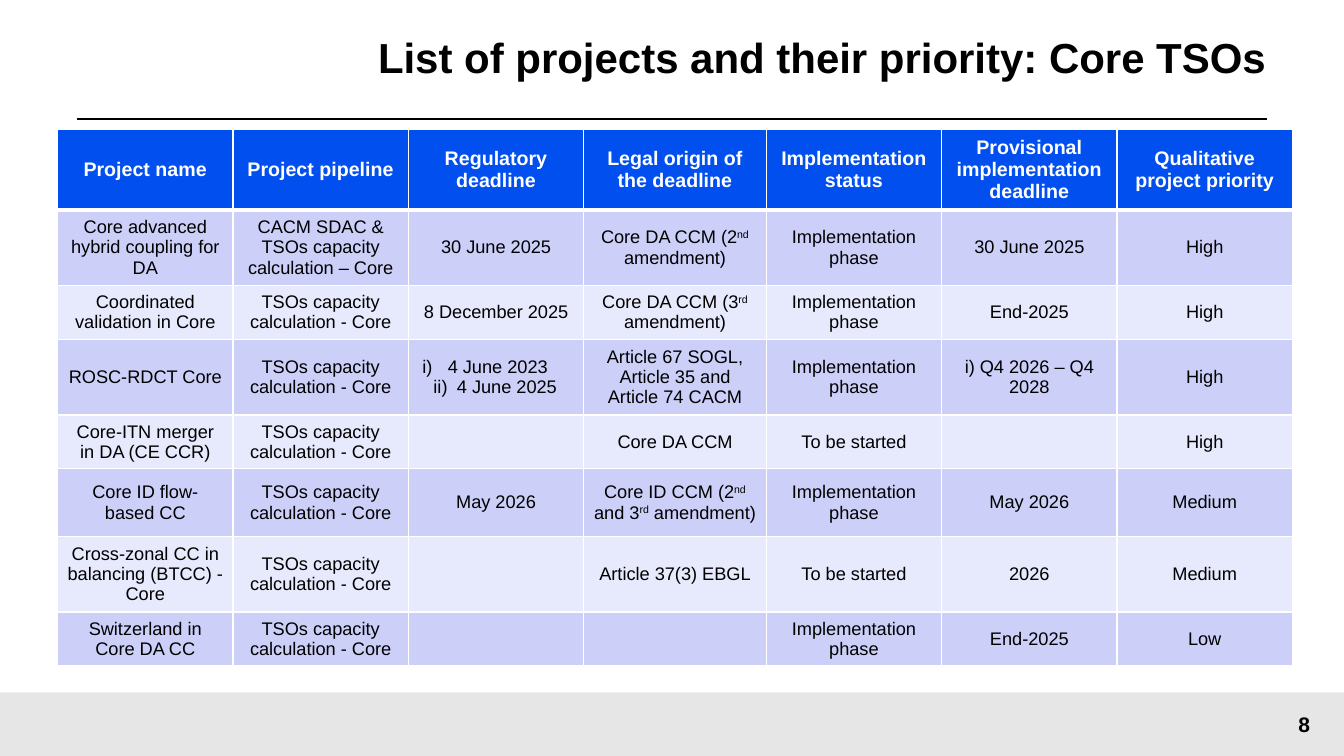
from dataclasses import dataclass

from lxml import etree
from pptx import Presentation
from pptx import util as u
from pptx.dml.color import RGBColor
from pptx.enum import shapes, text
from pptx.oxml import ns


@dataclass(frozen=True)
class Theme:
    font: str = "Arial"
    black: str = "000000"
    white: str = "FFFFFF"
    header: str = "004FEE"
    bands: tuple = ("CCD0F8", "E7E9FC")
    footer: str = "E6E6E6"
    title_size: int = 30
    page_size: int = 15
    header_size: int = 14
    body_size: int = 13


THEME = Theme()
CENTER = text.PP_ALIGN.CENTER
LEFT = text.PP_ALIGN.LEFT
RIGHT = text.PP_ALIGN.RIGHT

SLIDE_WIDTH, SLIDE_HEIGHT = 33.87, 19.05
COLUMN_WIDTHS = [4.42, 4.42, 4.42, 4.6, 4.42, 4.42, 4.42]
ROW_HEIGHTS = [1.83, 1.7, 1.24, 1.7, 1.22, 1.7, 1.7, 1.22]
# Left margin and hanging indent of the items in a numbered cell
ITEM_INDENTS = [(0.74, 0.64), (0.97, 0.59)]

HEADINGS = ["Project name", "Project pipeline", "Regulatory deadline",
            "Legal origin of the deadline", "Implementation status",
            "Provisional implementation deadline", "Qualitative project priority"]
PIPELINE = "TSOs capacity calculation - Core"
ACTIVE = "Implementation phase"
WAITING = "To be started"
# Carets enclose superscripts
PROJECTS = [
    ["Core advanced hybrid coupling for DA", "CACM SDAC & TSOs capacity calculation – Core",
     "30 June 2025", "Core DA CCM (2^nd^ amendment)", ACTIVE, "30 June 2025", "High"],
    ["Coordinated validation in Core", PIPELINE, "8 December 2025",
     "Core DA CCM (3^rd^ amendment)", ACTIVE, "End-2025", "High"],
    ["ROSC-RDCT Core", PIPELINE, "i)\t4 June 2023\nii)\t4 June 2025",
     "Article 67 SOGL, Article 35 and Article 74 CACM", ACTIVE, "i) Q4 2026 – Q4 2028", "High"],
    ["Core-ITN merger in DA (CE CCR)", PIPELINE, "", "Core DA CCM", WAITING, "", "High"],
    ["Core ID flow-based CC", PIPELINE, "May 2026",
     "Core ID CCM (2^nd^ and 3^rd^ amendment)", ACTIVE, "May 2026", "Medium"],
    ["Cross-zonal CC in balancing (BTCC) - Core", PIPELINE, "", "Article 37(3) EBGL",
     WAITING, "2026", "Medium"],
    ["Switzerland in Core DA CC", PIPELINE, "", "", ACTIVE, "End-2025", "Low"],
]


def write(frame, wording, size, color=THEME.black, bold=False, align=CENTER, spacing=None):
    """Fill a text frame, one paragraph per line of wording."""
    frame.word_wrap = True
    lines = wording.split("\n")
    for index, line in enumerate(lines):
        paragraph = frame.paragraphs[0] if index == 0 else frame.add_paragraph()
        paragraph.alignment = align
        paragraph.line_spacing = spacing
        if len(lines) > 1:
            margin, hanging = ITEM_INDENTS[index]
            properties = paragraph._p.get_or_add_pPr()
            properties.set("marL", str(u.Cm(margin)))
            properties.set("indent", str(-u.Cm(hanging)))
        paragraph.font.size = u.Pt(size)
        for position, part in enumerate(line.split("^")):
            if not part:
                continue
            run = paragraph.add_run()
            run.text = part
            run.font.name = THEME.font
            run.font.size = u.Pt(size)
            run.font.bold = bold
            run.font.color.rgb = RGBColor.from_string(color)
            if position % 2:
                run._r.get_or_add_rPr().set("baseline", "30000")


def add_text(slide, wording, left, top, width, height, inset_x=0, inset_y=0, **style):
    box = slide.shapes.add_textbox(u.Cm(left), u.Cm(top), u.Cm(width), u.Cm(height))
    frame = box.text_frame
    frame.margin_left = frame.margin_right = u.Cm(inset_x)
    frame.margin_top = frame.margin_bottom = u.Cm(inset_y)
    frame.vertical_anchor = text.MSO_ANCHOR.MIDDLE
    write(frame, wording, **style)


def set_borders(cell, top, bottom):
    """Draw white cell borders; top and bottom are widths in points."""
    properties = cell._tc.get_or_add_tcPr()
    for side, width in (("L", 1), ("R", 1), ("T", top), ("B", bottom)):
        line = etree.SubElement(properties, ns.qn(f"a:ln{side}"), w=str(u.Pt(width)))
        fill = etree.SubElement(line, ns.qn("a:solidFill"))
        etree.SubElement(fill, ns.qn("a:srgbClr"), val=THEME.white)


def add_footer(slide, left, top, width, height, page):
    band = slide.shapes.add_shape(shapes.MSO_SHAPE.RECTANGLE,
                                  u.Cm(left), u.Cm(top), u.Cm(width), u.Cm(height))
    band.shadow.inherit = False
    band.fill.solid()
    band.fill.fore_color.rgb = RGBColor.from_string(THEME.footer)
    band.line.fill.background()
    add_text(slide, page, left + width - 2, top, 2, height, size=THEME.page_size, bold=True)


def add_heading(slide, left, top, width, height, wording):
    bottom = u.Cm(top + height)
    rule = slide.shapes.add_connector(shapes.MSO_CONNECTOR.STRAIGHT,
                                      u.Cm(left), bottom, u.Cm(left + width), bottom)
    rule.line.color.rgb = RGBColor.from_string(THEME.black)
    rule.line.width = u.Pt(1.5)
    etree.SubElement(rule._element.spPr, ns.qn("a:effectLst"))
    indent = 5.8
    add_text(slide, wording, left + indent, top, width - indent, height, inset_y=0.5,
             size=THEME.title_size, bold=True, align=RIGHT, spacing=0.9)


def add_project_table(slide, left, top):
    rows = [HEADINGS] + PROJECTS
    graphic = slide.shapes.add_table(len(rows), len(HEADINGS), u.Cm(left), u.Cm(top),
                                     u.Cm(sum(COLUMN_WIDTHS)), u.Cm(sum(ROW_HEIGHTS)))
    table = graphic.table
    for column, width in zip(table.columns, COLUMN_WIDTHS):
        column.width = u.Cm(width)
    for row, height in zip(table.rows, ROW_HEIGHTS):
        row.height = u.Cm(height)

    for row_index, row in enumerate(rows):
        is_header = row_index == 0
        color = THEME.header if is_header else THEME.bands[(row_index - 1) % 2]
        for column_index, wording in enumerate(row):
            cell = table.cell(row_index, column_index)
            set_borders(cell, top=3 if row_index == 1 else 1, bottom=3 if is_header else 1)
            cell.fill.solid()
            cell.fill.fore_color.rgb = RGBColor.from_string(color)
            cell.vertical_anchor = text.MSO_ANCHOR.MIDDLE
            write(cell.text_frame, wording,
                  size=THEME.header_size if is_header else THEME.body_size,
                  color=THEME.white if is_header else THEME.black,
                  bold=is_header, align=LEFT if "\n" in wording else CENTER)


def main():
    presentation = Presentation()
    presentation.slide_width = u.Cm(SLIDE_WIDTH)
    presentation.slide_height = u.Cm(SLIDE_HEIGHT)
    slide = presentation.slides.add_slide(presentation.slide_layouts[6])

    # Footer band with page number
    add_footer(slide, 0, 17.45, SLIDE_WIDTH, 1.6, "8")
    # Title above its rule
    add_heading(slide, 1.93, 0, 30, 3, "List of projects and their priority: Core TSOs")
    # Project overview
    add_project_table(slide, 1.45, 3.25)

    presentation.save("out.pptx")


if __name__ == "__main__":
    main()
